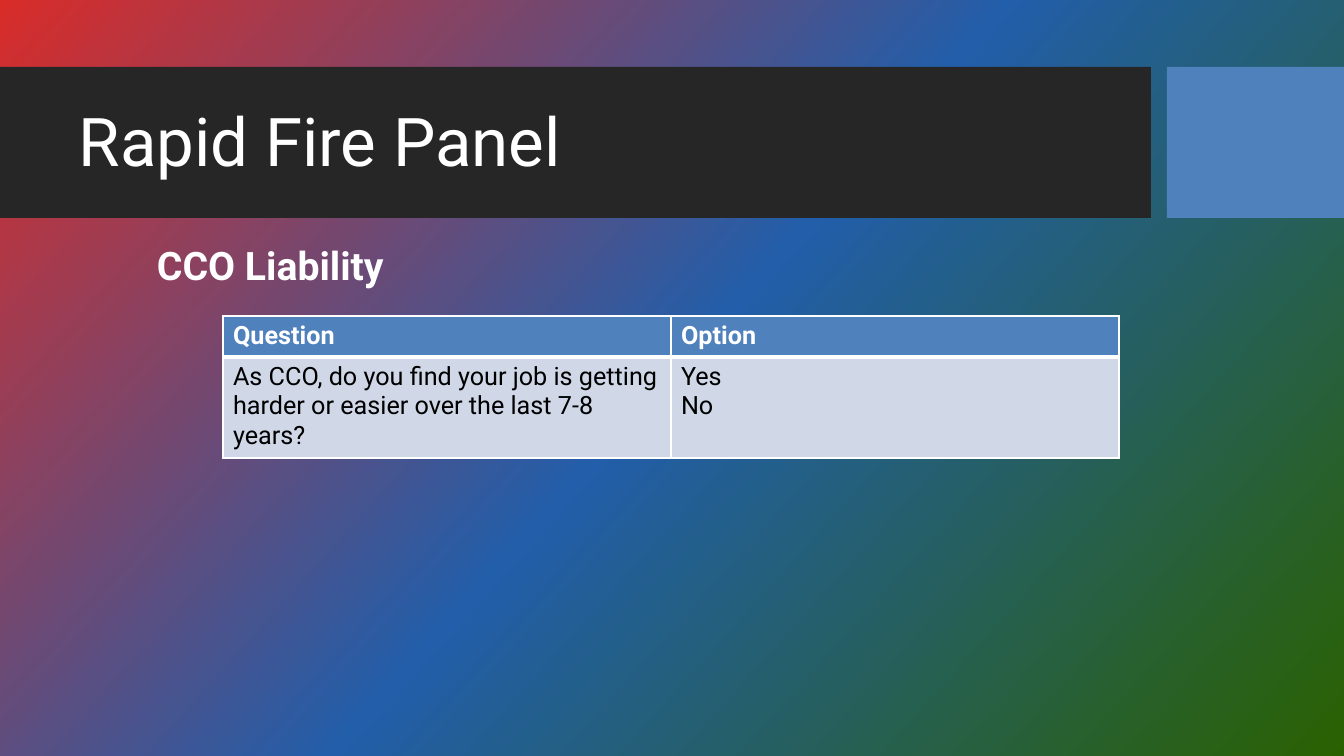
"""Build the Rapid Fire Panel slide with its question table."""
from copy import deepcopy

from lxml.etree import SubElement
from pptx import Presentation
from pptx.dml.color import RGBColor as RGB
from pptx.enum.shapes import MSO_SHAPE as SHAPE
from pptx.enum.text import MSO_ANCHOR as ANCHOR
from pptx.oxml.ns import qn
from pptx.util import Pt

PX = 914400 / 100.8
C = {"red": "D92C29", "blue": "225EA9", "green": "2A6100", "dark": "262626",
     "accent": "4F81BD", "pale": "D0D8E8", "white": "FFFFFF", "black": "000000"}


def px(*values):
    """Turn pixel lengths into EMU."""
    return [round(v * PX) for v in values]


def write(tf, lines, color, **fmt):
    """Fill a text frame with one formatted paragraph per line."""
    tf.word_wrap = True
    for i, line in enumerate(lines):
        p = tf.paragraphs[0] if i == 0 else tf.add_paragraph()
        r = p.add_run()
        r.text = line
        r.font.color.rgb = RGB.from_string(C[color])
        for name, value in {"name": "Roboto", **fmt}.items():
            setattr(r.font, name, value)


prs = Presentation()
prs.slide_width, prs.slide_height = px(1344, 756)
s = prs.slides.add_slide(prs.slide_layouts[6])

bg = s.background.fill
bg.gradient()
bg.gradient_angle = 360 - 42
gs_list = s.element.find(".//" + qn("a:gsLst"))
gs_list.insert(1, deepcopy(gs_list[0]))
for stop, color, pos in zip(bg.gradient_stops, ("red", "blue", "green"), (0, 0.5, 1)):
    stop.color.rgb = RGB.from_string(C[color])
    stop.position = pos

for left, width, color in ((0, 1151, "dark"), (1167, 177, "accent")):
    sp = s.shapes.add_shape(SHAPE.RECTANGLE, *px(left, 67, width, 151))
    sp.shadow.inherit = False
    sp.fill.solid()
    sp.fill.fore_color.rgb = RGB.from_string(C[color])
    sp.line.fill.background()

title = s.shapes.add_textbox(*px(69, 94, 1082, 101)).text_frame
title.vertical_anchor = ANCHOR.MIDDLE
write(title, ["Rapid Fire Panel"], "white", size=Pt(48))
title.paragraphs[0].line_spacing = 0.9

topic = s.shapes.add_textbox(*px(147, 236, 1174, 437)).text_frame
write(topic, ["CCO Liability"], "white", size=Pt(28), bold=True)

rows = [
    [["Question"], ["Option"]],
    [["As CCO, do you find your job is getting harder or easier over the last 7-8 years?"],
     ["Yes", "No"]],
]
table = s.shapes.add_table(2, 2, *px(223, 316, 896, 142)).table
for row, height in zip(table.rows, px(41, 101)):
    row.height = height
for i, row in enumerate(rows):
    header = i == 0
    for j, lines in enumerate(row):
        cell = table.cell(i, j)
        write(cell.text_frame, lines, "white" if header else "black",
              size=Pt(18), bold=header)
        tc_pr = cell._tc.get_or_add_tcPr()
        for side in ("L", "R", "T", "B"):
            thick = (header and side == "B") or (not header and side == "T")
            ln = SubElement(tc_pr, qn(f"a:ln{side}"), w=str(Pt(3 if thick else 1)))
            fill = SubElement(ln, qn("a:solidFill"))
            SubElement(fill, qn("a:srgbClr"), val=C["white"])
        cell.fill.solid()
        cell.fill.fore_color.rgb = RGB.from_string(C["accent" if header else "pale"])

prs.save("out.pptx")
